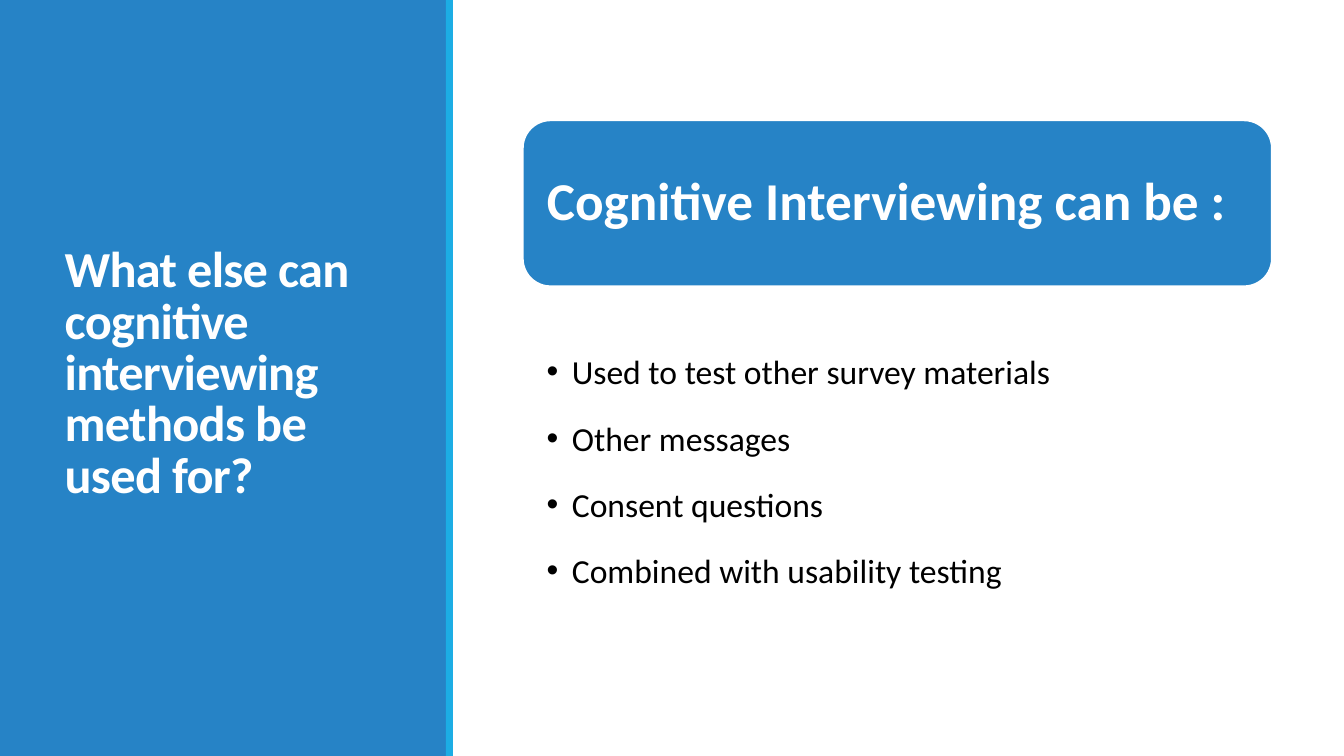
from lxml.etree import SubElement as Sub
from pptx import Presentation
from pptx.dml.color import RGBColor as Rgb
from pptx.enum.shapes import MSO_SHAPE as Kind
from pptx.enum.text import MSO_ANCHOR as Anchor, MSO_AUTO_SIZE as Fit, PP_ALIGN as Align
from pptx.oxml.ns import qn
from pptx.util import Pt

TITLE = "What else can cognitive interviewing methods be used for?"
HEAD = "Cognitive Interviewing can be :"
USES = [
    "Used to test other survey materials",
    "Other messages",
    "Consent questions",
    "Combined with usability testing",
]


class Theme:
    font = "Calibri"
    blue = Rgb(0x26, 0x83, 0xC6)
    cyan = Rgb(0x1C, 0xAD, 0xE4)
    white = Rgb(255, 255, 255)
    black = Rgb(0, 0, 0)
    title, head, body = Pt(36), Pt(38), Pt(24)


WIDE, HIGH = 960, 540
SIDE = 318.5          # width of the left panel
LEFT, SPAN = 373.5, 535   # column on the right
PAD = 5.8             # from the card's edge to its text


def put(item, values):
    for name, value in values.items():
        setattr(item, name, value)


def block(kind, box, color):
    shape = slide.shapes.add_shape(kind, *map(Pt, box))
    shape.shadow.inherit = False
    shape.fill.solid()
    shape.fill.fore_color.rgb = color
    shape.line.fill.background()
    return shape


def write(shape, lines, size, color, bold, frame, para):
    """Fill a text frame, one paragraph a line, and return the paragraphs."""
    text = shape.text_frame
    text.text = "\n".join(lines)
    put(text, {"word_wrap": True, "auto_size": Fit.NONE, **frame})
    for p in text.paragraphs:
        put(p, {"alignment": Align.LEFT, **para})
        font = p.runs[0].font
        put(font, {"name": Theme.font, "size": size, "bold": bold})
        font.color.rgb = color
    return text.paragraphs


def margins(left, top, right, bottom):
    sides = ("left", "top", "right", "bottom")
    return {f"margin_{s}": Pt(v) for s, v in zip(sides, (left, top, right, bottom))}


deck = Presentation()
put(deck, {"slide_width": Pt(WIDE), "slide_height": Pt(HIGH)})
slide = deck.slides.add_slide(deck.slide_layouts[5])

# Left panel with the title between the panel and its edge strip
block(Kind.RECTANGLE, (0, 0, SIDE, HIGH), Theme.blue)
strip = block(Kind.RECTANGLE, (SIDE, 0, 5, HIGH), Theme.cyan)
title = slide.shapes.title
strip.element.addprevious(title.element)
put(title, {"left": Pt(39), "top": Pt(41), "width": Pt(242.5), "height": Pt(454)})
for p in write(title, [TITLE], Theme.title, Theme.white, True,
               {"vertical_anchor": Anchor.MIDDLE}, {"line_spacing": 0.85}):
    p.runs[0].font.element.set("spc", "-50") if hasattr(p.runs[0].font, "element") \
        else p.runs[0]._r.get_or_add_rPr().set("spc", "-50")

# Heading card
top, tall = 86, 118.5
card = block(Kind.ROUNDED_RECTANGLE, (LEFT, top, SPAN, tall), Theme.blue)
card.line.color.rgb = Theme.white
card.line.width = Pt(1.25)
head = slide.shapes.add_textbox(*map(Pt, (LEFT + PAD, top + PAD, SPAN - 2 * PAD, tall - 2 * PAD)))
write(head, [HEAD], Theme.head, Theme.white, True,
      {"vertical_anchor": Anchor.MIDDLE, **margins(11.4, 11.4, 11.4, 11.4)},
      {"line_spacing": 0.9})

# Bulleted uses
uses = slide.shapes.add_textbox(*map(Pt, (LEFT, 234, SPAN, 196)))
for p in write(uses, USES, Theme.body, Theme.black, False, margins(17, 2.4, 13.5, 2.4),
               {"level": 1, "line_spacing": 1.5, "space_after": Pt(4.2)}):
    props = p._p.get_or_add_pPr()
    put_at = {"marL": Pt(18), "indent": Pt(-18)}
    for name, value in put_at.items():
        props.set(name, str(int(value)))
    Sub(props, qn("a:buFont"), typeface="Arial")
    Sub(props, qn("a:buChar"), char="•")

deck.save("out.pptx")
